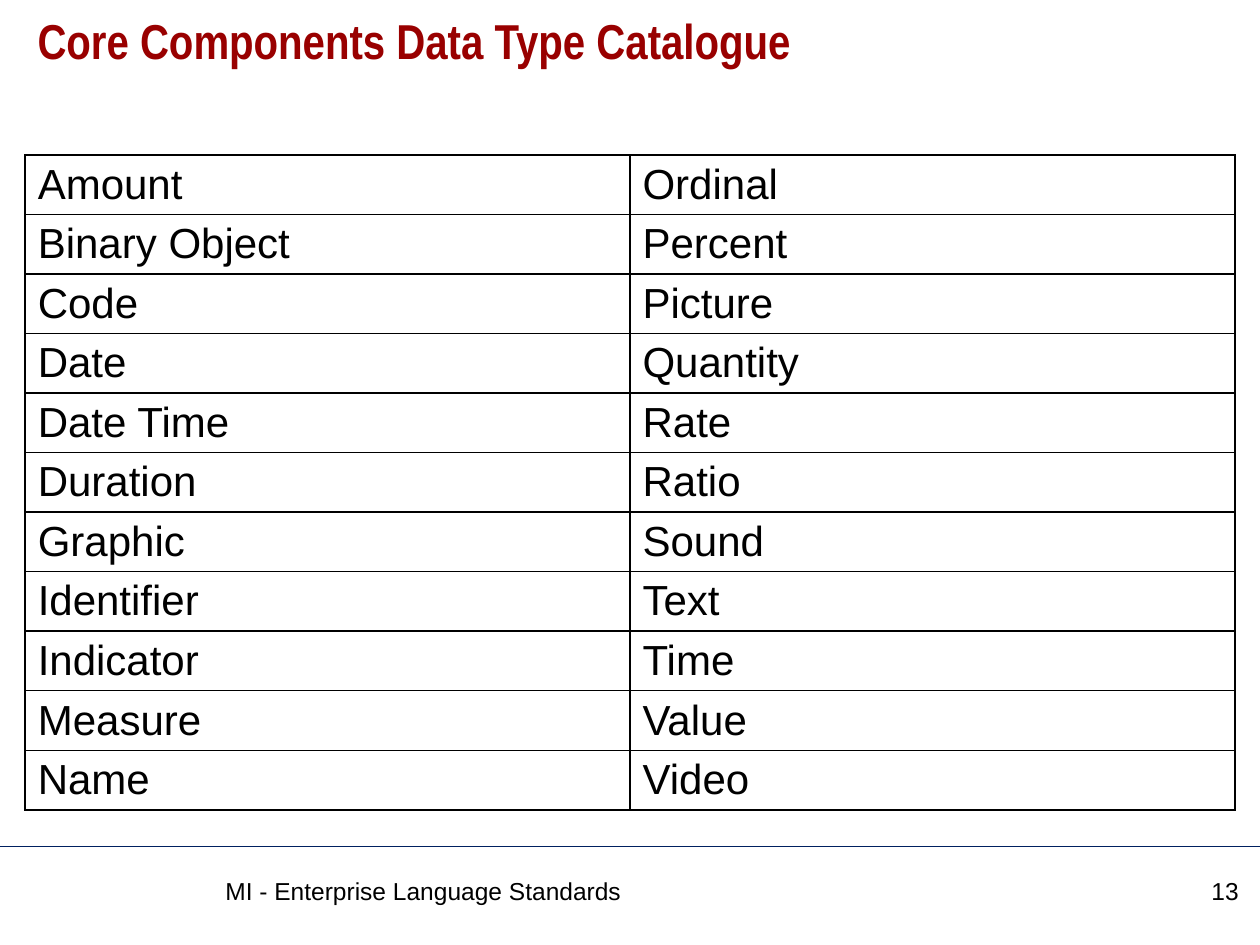
"""Build the slide listing the core components data types in a two-column table."""
from lxml.etree import SubElement
from pptx import Presentation
from pptx.dml.color import RGBColor
from pptx.enum.shapes import MSO_CONNECTOR as Connector
from pptx.enum.text import PP_ALIGN as Align
from pptx.oxml.ns import qn
from pptx.util import Inches, Pt

BLACK = RGBColor(0x00, 0x00, 0x00)
DARK_RED = RGBColor(0x99, 0x00, 0x00)
NAVY = RGBColor(0x00, 0x20, 0x60)

DATA_TYPES = [
    ("Amount", "Ordinal"),
    ("Binary Object", "Percent"),
    ("Code", "Picture"),
    ("Date", "Quantity"),
    ("Date Time", "Rate"),
    ("Duration", "Ratio"),
    ("Graphic", "Sound"),
    ("Identifier", "Text"),
    ("Indicator", "Time"),
    ("Measure", "Value"),
    ("Name", "Video"),
]


def style_font(font, size, color=BLACK, name="Arial", bold=False):
    font.name = name
    font.size = Pt(size)
    font.bold = bold
    font.color.rgb = color


def add_text(slide, text, left, top, width, height, size, align=Align.LEFT, **font_style):
    frame = slide.shapes.add_textbox(
        Inches(left), Inches(top), Inches(width), Inches(height)
    ).text_frame
    frame.word_wrap = True
    paragraph = frame.paragraphs[0]
    paragraph.text = text
    paragraph.alignment = align
    style_font(paragraph.font, size, **font_style)
    return paragraph


def add_rule(slide, y):
    rule = slide.shapes.add_connector(
        Connector.STRAIGHT, Inches(0), Inches(y), Inches(10), Inches(y)
    )
    rule.line.color.rgb = NAVY
    rule.line.width = Pt(0.75)
    SubElement(rule._element.spPr, qn("a:effectLst"))


def border_cell(cell):
    properties = cell._tc.get_or_add_tcPr()
    for position, side in enumerate(("a:lnL", "a:lnR", "a:lnT", "a:lnB")):
        border = properties.makeelement(qn(side), {"w": str(Pt(1))})
        fill = SubElement(border, qn("a:solidFill"))
        SubElement(fill, qn("a:srgbClr"), val=str(BLACK))
        properties.insert(position, border)


def add_type_table(slide):
    table_height = Inches(5.2)
    table = slide.shapes.add_table(
        len(DATA_TYPES), 2, Inches(0.2), Inches(1.23), Inches(9.6), table_height
    ).table
    table.first_row = False
    table.horz_banding = False
    for row, names in zip(table.rows, DATA_TYPES):
        row.height = table_height // len(DATA_TYPES)
        for cell, name in zip(row.cells, names):
            cell.text = name
            cell.margin_bottom = Inches(0.02)
            cell.fill.background()
            style_font(cell.text_frame.paragraphs[0].font, 24)
            border_cell(cell)


def main():
    deck = Presentation()
    deck.slide_width = Inches(10)
    deck.slide_height = Inches(7.5)
    slide = deck.slides.add_slide(deck.slide_layouts[6])

    add_rule(slide, 6.72)
    title = add_text(
        slide, "Core Components Data Type Catalogue", 0.2, 0.09, 9.6, 0.83, 28,
        color=DARK_RED, name="Arial Narrow", bold=True,
    )
    title.line_spacing = 0.9
    add_type_table(slide)
    add_text(slide, "MI - Enterprise Language Standards", 1.69, 6.9, 7.21, 0.45, 14)
    add_text(slide, "13", 9.01, 6.9, 0.92, 0.45, 14, Align.RIGHT)

    deck.save("out.pptx")


if __name__ == "__main__":
    main()
